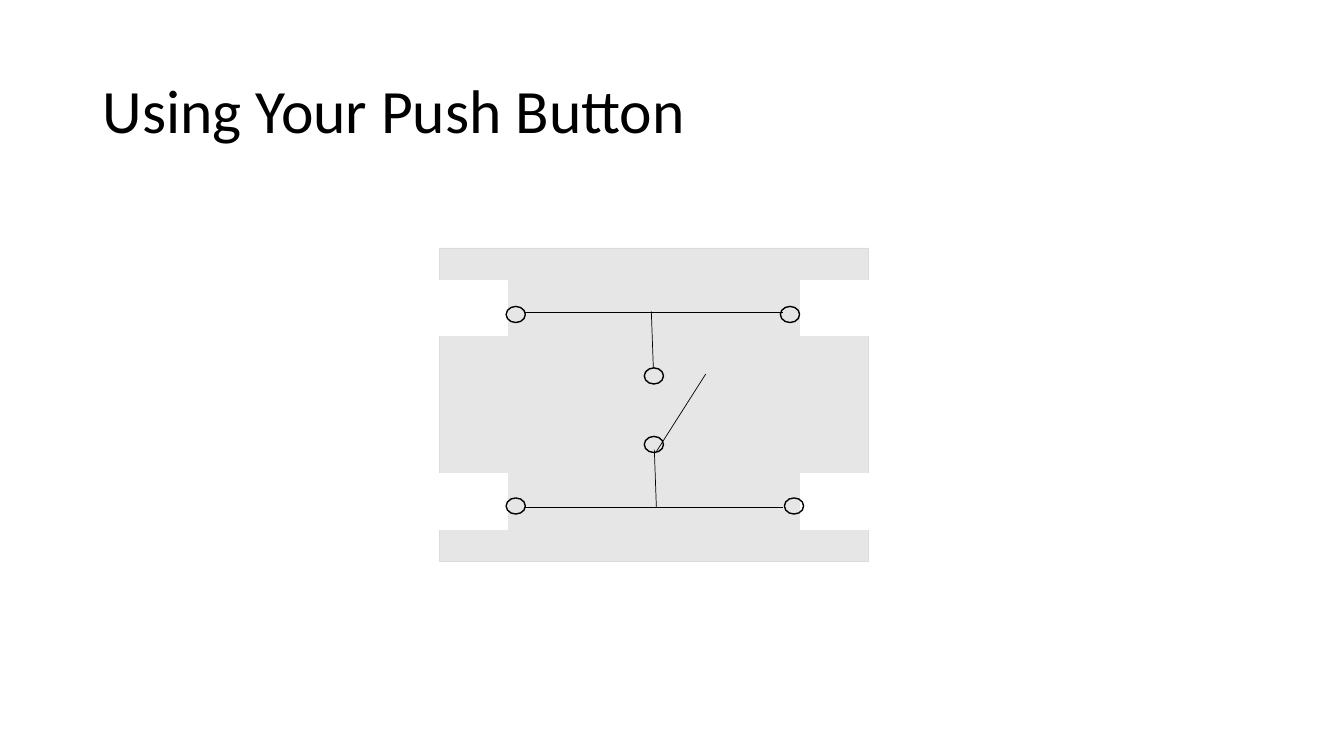
from itertools import product

from lxml import etree
from pptx import Presentation
from pptx import util as u
from pptx.dml.color import RGBColor
from pptx.enum import shapes, text
from pptx.oxml.ns import qn

COLORS = {"ink": "000000", "body": "E7E6E6", "edge": "DBDBDB", "gap": "FFFFFF"}


def color(name):
    return RGBColor.from_string(COLORS[name])


def add_title(slide, words):
    box = slide.shapes.add_textbox(
        u.Inches(0.92), u.Inches(0.4), u.Inches(11.5), u.Inches(1.45))
    frame = box.text_frame
    frame.word_wrap = True
    frame.vertical_anchor = text.MSO_ANCHOR.MIDDLE
    frame.text = words
    para = frame.paragraphs[0]
    para.line_spacing = 0.9
    font = para.runs[0].font
    font.name = "Calibri"
    font.size = u.Pt(44)
    font.color.rgb = color("ink")


def add_block(slide, kind, place, fill, line, width):
    """Add a preset shape; a fill of None leaves it hollow."""
    block = slide.shapes.add_shape(kind, *map(u.Inches, place))
    block.shadow.inherit = False
    if fill:
        block.fill.solid()
        block.fill.fore_color.rgb = color(fill)
    else:
        block.fill.background()
    block.line.color.rgb = color(line)
    block.line.width = u.Pt(width)


def add_rect(slide, place, fill, line):
    add_block(slide, shapes.MSO_SHAPE.RECTANGLE, place, fill, line, 0.5)


def add_node(slide, left, top):
    add_block(slide, shapes.MSO_SHAPE.OVAL, (left, top, 0.19, 0.16),
              None, "ink", 1)


def add_wire(slide, *ends):
    wire = slide.shapes.add_connector(
        shapes.MSO_CONNECTOR.STRAIGHT, *map(u.Inches, ends))
    wire.line.color.rgb = color("ink")
    wire.line.width = u.Pt(0.5)
    etree.SubElement(wire._element.spPr, qn("a:effectLst"))


def main():
    deck = Presentation()
    deck.slide_width, deck.slide_height = u.Inches(13.33), u.Inches(7.5)
    slide = deck.slides.add_slide(deck.slide_layouts[6])

    add_title(slide, "Using Your Push Button")
    add_rect(slide, (4.36, 2.46, 4.25, 3.11), "body", "edge")
    for left, top in product((4.07, 7.94), (2.78, 4.7)):
        add_rect(slide, (left, top, 0.96, 0.55), "gap", "gap")

    for rail in (3.1, 5.03):
        add_wire(slide, 5.2, rail, 7.77, rail)
    add_wire(slide, 6.46, 3.09, 6.48, 3.65)
    add_wire(slide, 6.49, 4.46, 6.51, 5.03)
    add_wire(slide, 7, 3.71, 6.51, 4.48)

    nodes = [(6.39, 3.65), (6.39, 4.33), (5.02, 3.04), (7.74, 3.04),
             (5.02, 4.94), (7.78, 4.94)]
    for left, top in nodes:
        add_node(slide, left, top)

    deck.save("out.pptx")


if __name__ == "__main__":
    main()
